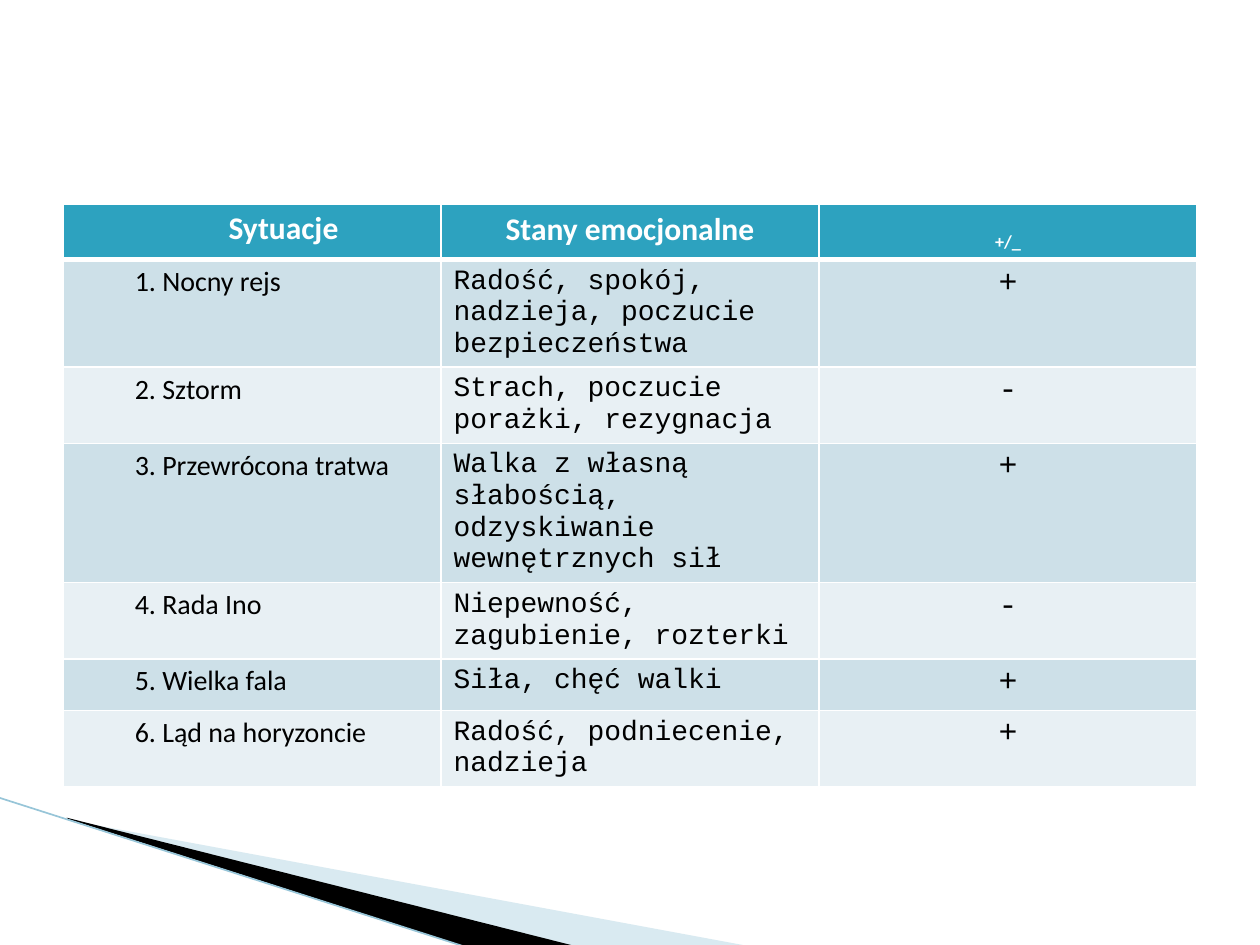
from lxml import etree
from pptx import Presentation
from pptx import util as u
from pptx.dml.color import RGBColor
from pptx.enum import shapes, text
from pptx.oxml.ns import qn

WHITE, BLACK, TEAL = "FFFFFF", "000000", "2DA2BF"
BANDS = ("CDE0E8", "E8F0F4")
HEADERS = ("Sytuacje", "Stany emocjonalne", "+/_")
SITUATIONS = (
    ("1. Nocny rejs", "Radość, spokój, nadzieja, poczucie bezpieczeństwa", "+"),
    ("2. Sztorm", "Strach, poczucie porażki, rezygnacja", "-"),
    ("3. Przewrócona tratwa", "Walka z własną słabością, odzyskiwanie wewnętrznych sił", "+"),
    ("4. Rada Ino", "Niepewność, zagubienie, rozterki", "-"),
    ("5. Wielka fala", "Siła, chęć walki", "+"),
    ("6. Ląd na horyzoncie", "Radość, podniecenie, nadzieja", "+"),
)


def color(value):
    """Turn a hex string into a colour."""
    return RGBColor.from_string(value)


def add_wedge(slide, left, top, points, fill, opacity=100):
    """Draw a closed wedge from points relative to left and top."""
    corners = [(u.Inches(left + x), u.Inches(top + y)) for x, y in points]
    builder = slide.shapes.build_freeform(*corners[0], scale=1.0)
    builder.add_line_segments(corners[1:], close=True)
    shape = builder.convert_to_shape()
    shape.shadow.inherit = False
    shape.line.fill.background()
    shape.fill.solid()
    shape.fill.fore_color.rgb = color(fill)
    if opacity < 100:
        srgb = shape.fill._xPr.find(".//" + qn("a:srgbClr"))
        etree.SubElement(srgb, qn("a:alpha")).set("val", str(opacity * 1000))


def add_corner(slide, left, top):
    """Draw the wedges and the edge line of the lower left corner."""
    add_wedge(slide, left + 0.56, top + 0.17, ((0, 0.01), (5.4, 1.01), (4.01, 1.01), (0, 0)), "A0CBDC", 40)
    add_wedge(slide, left + 0.54, top + 0.16, ((0, 0), (4.04, 1.02), (3.19, 1.03), (0.01, 0.01)), BLACK)
    edge = slide.shapes.add_connector(
        shapes.MSO_CONNECTOR.STRAIGHT, u.Inches(left), u.Inches(top),
        u.Inches(left + 3.72), u.Inches(top + 1.19))
    edge.line.color.rgb = color("97C5D8")
    edge.line.width = u.Pt(0.95)
    etree.SubElement(edge._element.spPr, qn("a:effectLst"))


def set_borders(cell, bottom):
    """Give a cell white borders with its own bottom width in points."""
    properties = cell._tc.get_or_add_tcPr()
    for index, (side, width) in enumerate((("L", 1), ("R", 1), ("T", 1), ("B", bottom))):
        line = etree.Element(qn(f"a:ln{side}"), w=str(u.Pt(width)))
        fill = etree.SubElement(line, qn("a:solidFill"))
        etree.SubElement(fill, qn("a:srgbClr")).set("val", WHITE)
        properties.insert(index, line)


def fill_cell(cell, words, row, column):
    """Write and format one cell according to its row and column."""
    header = row == 0
    cell.fill.solid()
    cell.fill.fore_color.rgb = color(TEAL if header else BANDS[(row - 1) % 2])
    set_borders(cell, 3 if header else 1)
    cell.text_frame.text = words
    paragraph = cell.text_frame.paragraphs[0]
    centered = header or column == 2
    paragraph.alignment = text.PP_ALIGN.CENTER if centered else text.PP_ALIGN.LEFT
    if column == 0:
        cell.margin_left = cell.margin_right = u.Inches(0.07)
        cell.margin_top = cell.margin_bottom = 0
        paragraph.line_spacing = 1.15
        paragraph._p.get_or_add_pPr().set("marL", str(u.Inches(0.5)))
    font = paragraph.runs[0].font
    font.name = "Calibri" if header or column == 0 else "Courier New"
    font.size = u.Pt(18 if centered else 16)
    font.bold = header
    font.color.rgb = color(WHITE if header else BLACK)
    if header and column == 2:
        font._element.set("baseline", "-25000")


def add_emotions_table(slide, left, top, width, row_height):
    """Place the table of situations and emotional states."""
    rows = (HEADERS, *SITUATIONS)
    table = slide.shapes.add_table(
        len(rows), len(HEADERS), u.Inches(left), u.Inches(top),
        u.Inches(width), u.Inches(row_height * len(rows))).table
    for row, entries in enumerate(rows):
        table.rows[row].height = u.Inches(row_height)
        for column, words in enumerate(entries):
            fill_cell(table.cell(row, column), words, row, column)


def main():
    """Build and save the slide."""
    presentation = Presentation()
    presentation.slide_width = u.Inches(10)
    presentation.slide_height = u.Inches(7.5)
    slide = presentation.slides.add_slide(presentation.slide_layouts[6])
    add_corner(slide, -0.01, 6.33)
    add_emotions_table(slide, 0.5, 1.62, 9, 0.41)
    presentation.save("out.pptx")


if __name__ == "__main__":
    main()
